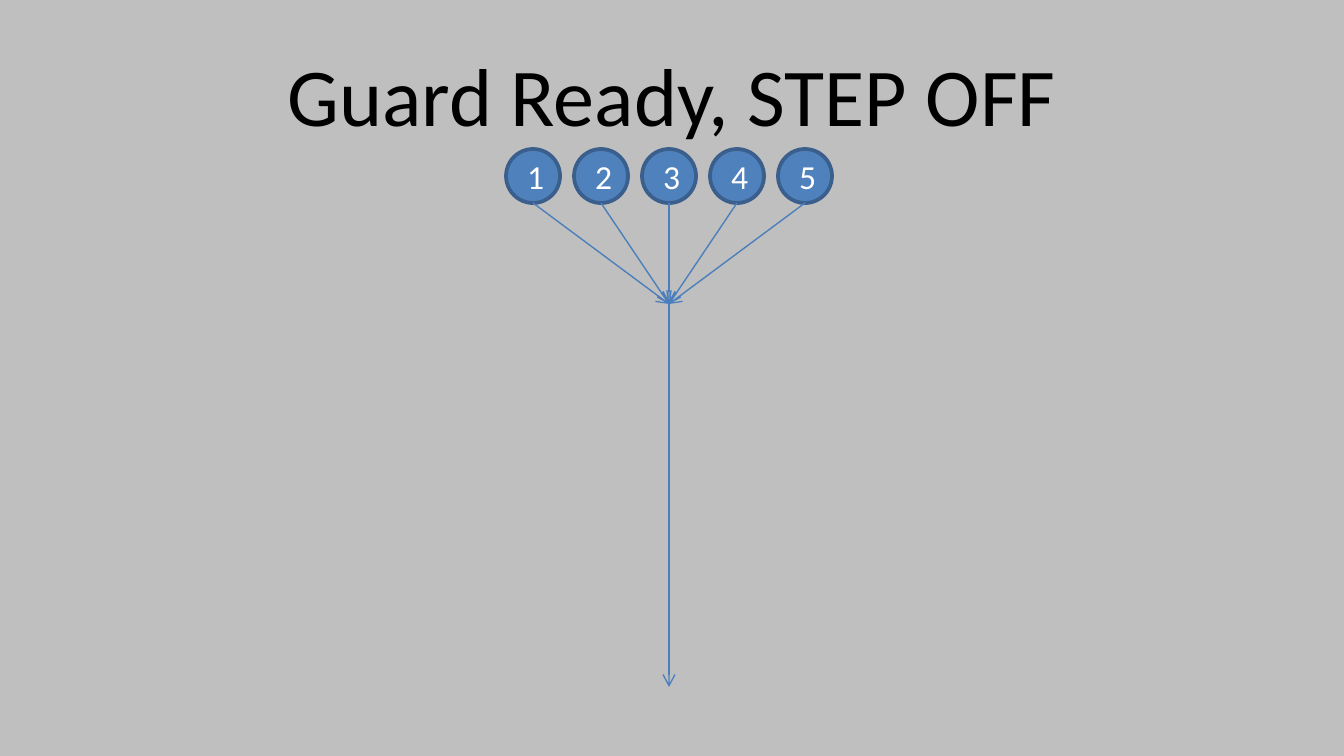
import dataclasses

import pptx
import pptx.dml.color
import pptx.enum.shapes
import pptx.enum.text
import pptx.oxml
import pptx.oxml.ns
import pptx.util

SCALE = 914400 / 134.4  # EMU in one px
MID, HUB, END = 669, 304, 687  # centre line, meeting point, end of march
TOP, SIZE, STEP = 149, 54, 68  # row of guards


@dataclasses.dataclass
class Guard:
    label: str
    x: int


@dataclasses.dataclass
class Move:
    x: int
    y: int
    to_x: int
    to_y: int


def px(num: int) -> int:
    return round(num * SCALE)


def color(code: str) -> pptx.dml.color.RGBColor:
    return pptx.dml.color.RGBColor.from_string(code)


def apply(item, form: dict) -> None:
    for name, value in form.items():
        setattr(item, name, value)


def write(shape, text: str, size: int, code: str) -> None:
    frame = shape.text_frame
    apply(frame, {"text": text, "word_wrap": True,
                  "vertical_anchor": pptx.enum.text.MSO_ANCHOR.MIDDLE})
    line = frame.paragraphs[0]
    line.alignment = pptx.enum.text.PP_ALIGN.CENTER
    font = line.runs[0].font
    apply(font, {"name": "Calibri", "size": pptx.util.Pt(size)})
    font.color.rgb = color(code)


def draw_guard(slide, guard: Guard) -> None:
    oval = slide.shapes.add_shape(
        pptx.enum.shapes.MSO_SHAPE.OVAL,
        px(guard.x - SIZE // 2), px(TOP), px(SIZE), px(SIZE))
    oval.shadow.inherit = False
    oval.fill.solid()
    oval.fill.fore_color.rgb = color("4F81BD")
    oval.line.color.rgb = color("3A5F8C")
    oval.line.width = pptx.util.Pt(2)
    write(oval, guard.label, 18, "FFFFFF")


def draw_move(slide, move: Move) -> None:
    arrow = slide.shapes.add_connector(
        pptx.enum.shapes.MSO_CONNECTOR.STRAIGHT,
        px(move.x), px(move.y), px(move.to_x), px(move.to_y))
    arrow.line.color.rgb = color("4B7EBC")
    arrow.line.width = pptx.util.Pt(0.75)
    tip = pptx.oxml.parse_xml(
        f'<a:tailEnd {pptx.oxml.ns.nsdecls("a")} type="arrow"/>')
    arrow.line._get_or_add_ln().append(tip)
    # Empty effect list: no shadow
    arrow._element.spPr.append(pptx.oxml.parse_xml(
        f'<a:effectLst {pptx.oxml.ns.nsdecls("a")}/>'))


def main() -> None:
    deck = pptx.Presentation()
    apply(deck, {"slide_width": px(1344), "slide_height": px(756)})
    slide = deck.slides.add_slide(deck.slide_layouts[5])
    slide.background.fill.solid()
    slide.background.fill.fore_color.rgb = color("BFBFBF")

    # Title
    title = slide.shapes.title
    apply(title, {"left": px(67), "top": px(31),
                  "width": px(1210), "height": px(126)})
    write(title, "Guard Ready, STEP OFF", 44, "000000")

    # Row of guards, centred on the line of march
    guards = [Guard(str(i + 1), MID + (i - 2) * STEP) for i in range(5)]
    for guard in guards:
        draw_guard(slide, guard)

    # All step to the hub, then march down
    moves = [Move(guard.x, TOP + SIZE, MID, HUB) for guard in guards]
    moves.append(Move(MID, HUB, MID, END))
    for move in moves:
        draw_move(slide, move)

    deck.save("out.pptx")


if __name__ == "__main__":
    main()
